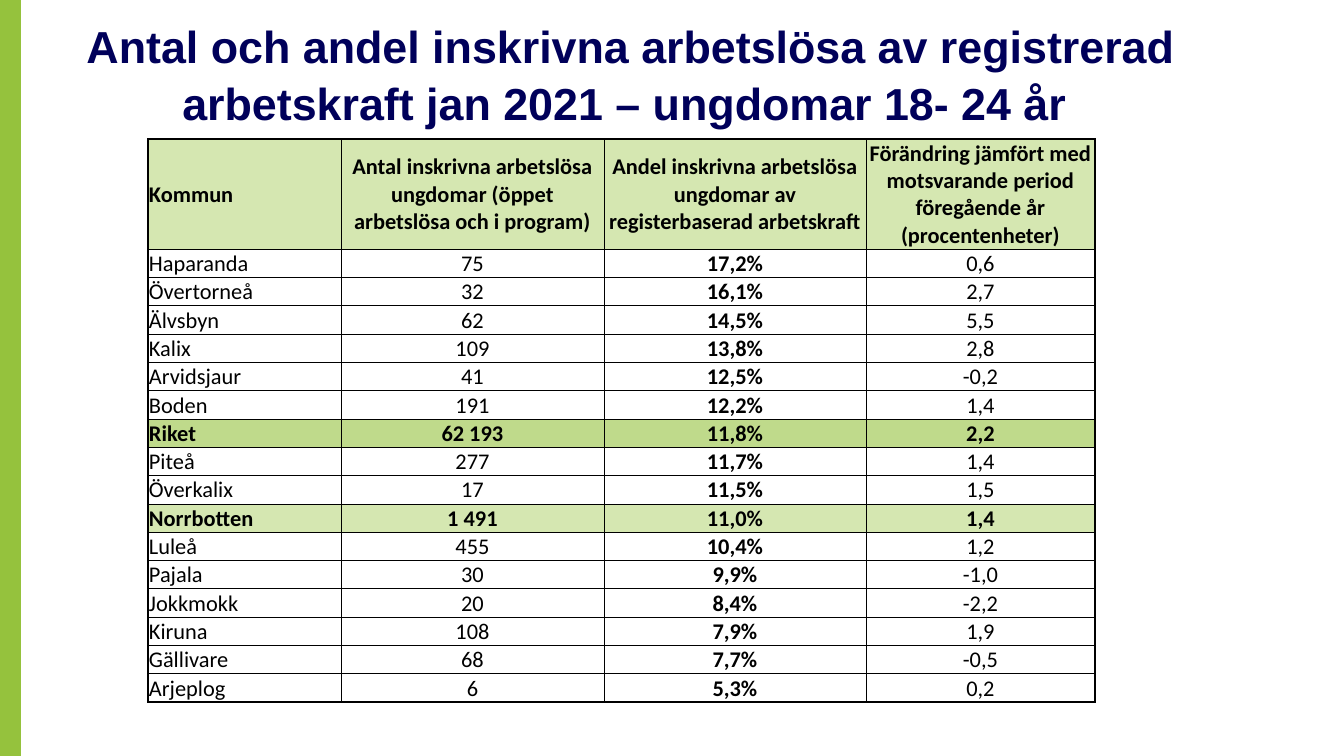
from dataclasses import dataclass
from typing import NamedTuple, Optional

from lxml import etree
from pptx import Presentation
from pptx.dml.color import RGBColor
from pptx.enum.shapes import MSO_SHAPE
from pptx.enum.text import MSO_ANCHOR, MSO_AUTO_SIZE, PP_ALIGN
from pptx.oxml.ns import qn
from pptx.util import Emu, Pt

RECTANGLE = MSO_SHAPE.RECTANGLE
MIDDLE, BOTTOM = MSO_ANCHOR.MIDDLE, MSO_ANCHOR.BOTTOM
LEFT, CENTER = PP_ALIGN.LEFT, PP_ALIGN.CENTER
NO_AUTOFIT = MSO_AUTO_SIZE.NONE
TITLE_ONLY = 5
EMU_PER_PX = 914400 / 134.4


@dataclass(frozen=True)
class Theme:
    title_font: str = "Arial"
    table_font: str = "Calibri"
    title_size: int = 24
    table_size: int = 12
    title_color: str = "00005A"
    text_color: str = "000000"
    bar_color: str = "95C23D"
    light_green: str = "D5E7B1"
    mid_green: str = "BFDA8B"
    outer_line: float = 1
    inner_line: float = 0.5


class Box(NamedTuple):
    left: int
    top: int
    width: int
    height: int


class Row(NamedTuple):
    municipality: str
    count: str
    share: str
    change: str


THEME = Theme()
PAGE_WIDTH, PAGE_HEIGHT = 1344, 756
BAR = Box(0, 0, 21, PAGE_HEIGHT)
TITLE = Box(85, 30, 1091, 99)
COLUMN_WIDTHS = (193, 263, 262, 229)
SHARE_COLUMN = 2
HEADER_HEIGHT, ROW_HEIGHT = 110, 28
TABLE_LEFT, TABLE_TOP = 148, 139

TITLE_TEXT = ("Antal och andel inskrivna arbetslösa av registrerad "
              "arbetskraft jan 2021 – ungdomar 18- 24 år ")
ROWS = [
    Row("Kommun",
        "Antal inskrivna arbetslösa ungdomar (öppet arbetslösa och i program)",
        "Andel inskrivna arbetslösa ungdomar av registerbaserad arbetskraft",
        "Förändring jämfört med motsvarande period föregående år (procentenheter)"),
    Row("Haparanda", "75", "17,2%", "0,6"),
    Row("Övertorneå", "32", "16,1%", "2,7"),
    Row("Älvsbyn", "62", "14,5%", "5,5"),
    Row("Kalix", "109", "13,8%", "2,8"),
    Row("Arvidsjaur", "41", "12,5%", "-0,2"),
    Row("Boden", "191", "12,2%", "1,4"),
    Row("Riket", "62 193", "11,8%", "2,2"),
    Row("Piteå", "277", "11,7%", "1,4"),
    Row("Överkalix", "17", "11,5%", "1,5"),
    Row("Norrbotten", "1 491", "11,0%", "1,4"),
    Row("Luleå", "455", "10,4%", "1,2"),
    Row("Pajala", "30", "9,9%", "-1,0"),
    Row("Jokkmokk", "20", "8,4%", "-2,2"),
    Row("Kiruna", "108", "7,9%", "1,9"),
    Row("Gällivare", "68", "7,7%", "-0,5"),
    Row("Arjeplog", "6", "5,3%", "0,2"),
]
ROW_FILLS = {
    "Kommun": THEME.light_green,
    "Riket": THEME.mid_green,
    "Norrbotten": THEME.light_green,
}


def px(length: int) -> Emu:
    return Emu(round(length * EMU_PER_PX))


def color(value: str) -> RGBColor:
    return RGBColor.from_string(value)


def format_font(font, name: str, size: int, value: str, bold: bool) -> None:
    font.name, font.size, font.bold = name, Pt(size), bold
    font.color.rgb = color(value)


def add_bar(page, box: Box) -> None:
    bar = page.shapes.add_shape(RECTANGLE, *map(px, box))
    bar.shadow.inherit = False
    bar.fill.solid()
    bar.fill.fore_color.rgb = color(THEME.bar_color)
    bar.line.fill.background()


def set_title(page, text: str, box: Box) -> None:
    title = page.shapes.title
    title.left, title.top, title.width, title.height = map(px, box)
    frame = title.text_frame
    frame.text = text
    frame.word_wrap = True
    frame.auto_size = NO_AUTOFIT
    frame.vertical_anchor = BOTTOM
    frame.margin_left = frame.margin_right = 0
    frame.margin_top = frame.margin_bottom = 0
    para = frame.paragraphs[0]
    para.alignment = CENTER
    para.line_spacing = 1.05
    format_font(para.runs[0].font, THEME.title_font, THEME.title_size,
                THEME.title_color, True)


def set_borders(cell, outer_sides: dict[str, bool]) -> None:
    """Draw the four cell lines, thicker where a side is on the table edge."""
    properties = cell._tc.get_or_add_tcPr()
    for side, is_outer in outer_sides.items():
        width = THEME.outer_line if is_outer else THEME.inner_line
        line = etree.SubElement(properties, qn(f"a:ln{side}"), w=str(Pt(width)))
        fill = etree.SubElement(line, qn("a:solidFill"))
        etree.SubElement(fill, qn("a:srgbClr"), val=THEME.text_color)


def set_fill(cell, value: Optional[str]) -> None:
    if value is None:
        cell.fill.background()
    else:
        cell.fill.solid()
        cell.fill.fore_color.rgb = color(value)


def write_cell(cell, text: str, alignment, anchor, bold: bool) -> None:
    cell.margin_left = cell.margin_right = cell.margin_top = px(1)
    cell.margin_bottom = 0
    cell.vertical_anchor = anchor
    cell.text_frame.text = text
    para = cell.text_frame.paragraphs[0]
    para.alignment = alignment
    format_font(para.runs[0].font, THEME.table_font, THEME.table_size,
                THEME.text_color, bold)


def add_unemployment_table(page, rows: list[Row]) -> None:
    heights = [HEADER_HEIGHT] + [ROW_HEIGHT] * (len(rows) - 1)
    box = Box(TABLE_LEFT, TABLE_TOP, sum(COLUMN_WIDTHS), sum(heights))
    table = page.shapes.add_table(len(rows), len(COLUMN_WIDTHS), *map(px, box)).table
    table.first_row = table.horz_banding = False
    for column, width in zip(table.columns, COLUMN_WIDTHS):
        column.width = px(width)
    last_row, last_column = len(rows) - 1, len(COLUMN_WIDTHS) - 1
    for i, row in enumerate(rows):
        table.rows[i].height = px(heights[i])
        row_fill = ROW_FILLS.get(row.municipality)
        for j, text in enumerate(row):
            cell = table.cell(i, j)
            write_cell(cell, text,
                       alignment=LEFT if j == 0 else CENTER,
                       anchor=MIDDLE if i == 0 else BOTTOM,
                       bold=row_fill is not None or j == SHARE_COLUMN)
            set_borders(cell, {"L": j == 0, "R": j == last_column,
                               "T": i == 0, "B": i == last_row})
            set_fill(cell, row_fill)


def main() -> None:
    deck = Presentation()
    deck.slide_width, deck.slide_height = px(PAGE_WIDTH), px(PAGE_HEIGHT)
    page = deck.slides.add_slide(deck.slide_layouts[TITLE_ONLY])
    add_bar(page, BAR)
    set_title(page, TITLE_TEXT, TITLE)
    add_unemployment_table(page, ROWS)
    deck.save("out.pptx")


if __name__ == "__main__":
    main()
